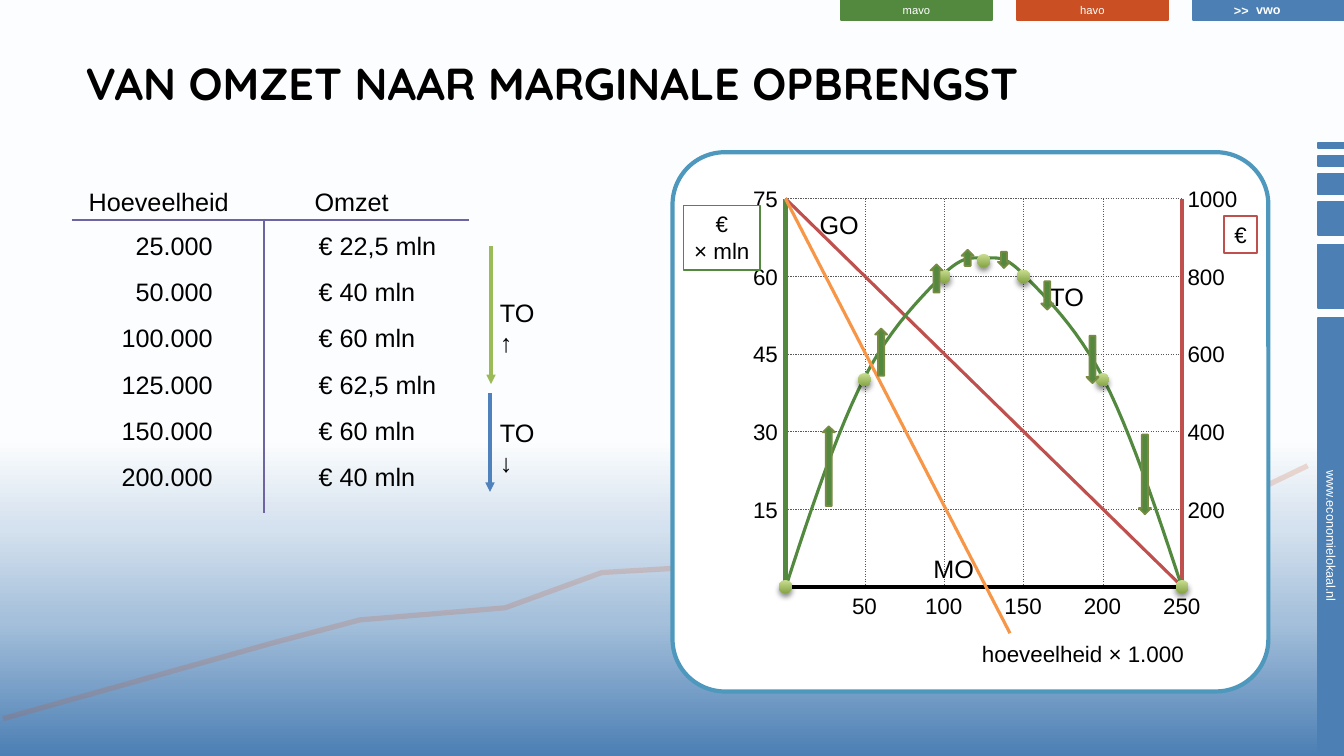
from lxml import etree
from pptx import Presentation
from pptx.dml.color import RGBColor
from pptx.enum.dml import MSO_LINE
from pptx.enum.shapes import MSO_CONNECTOR, MSO_SHAPE
from pptx.enum.text import MSO_ANCHOR, MSO_AUTO_SIZE, PP_ALIGN
from pptx.oxml.ns import qn
from pptx.util import Inches, Pt

WIDTH, HEIGHT = 13.33, 7.5
BLUE, GREEN, RUST = RGBColor(0x4C, 0x7F, 0xB4), RGBColor(0x52, 0x89, 0x3F), RGBColor(0xCA, 0x4F, 0x22)
BLACK, WHITE, GREY = RGBColor(0, 0, 0), RGBColor(255, 255, 255), RGBColor(0x59, 0x59, 0x59)
RED, ORANGE, PURPLE = RGBColor(0xC0, 0x50, 0x4D), RGBColor(0xF7, 0x96, 0x46), RGBColor(0x6F, 0x64, 0xA2)
FRAME, OLIVE = RGBColor(0x4F, 0x98, 0xBD), RGBColor(0x79, 0x8A, 0x42)
LIME, ARROW_BLUE = RGBColor(0x9B, 0xBB, 0x59), RGBColor(0x4F, 0x81, 0xBD)
SKY = [(0, "4C7FB4"), (18, "A5C0DB"), (30, "D4E1EE"), (42, "FCFDFE"), (50, "FFFFFF")]
MARKER = [(0, "C9DD90"), (100, "86A547")]
NO_TABLE_STYLE = "{2D5ABB26-0587-4C30-8999-92F81FD0307C}"

# Plot grid: five columns of 50 and five rows of 15 (left) or 200 (right)
PLOT_LEFT, PLOT_TOP, COLUMN, ROW, STEPS = 7.79, 1.97, 0.787, 0.77, 5
PLOT_RIGHT, PLOT_BOTTOM = PLOT_LEFT + STEPS * COLUMN, PLOT_TOP + STEPS * ROW

TREND = [(0.03, 7.13), (2.7, 6.38), (3.57, 6.15), (5.01, 6.03), (5.97, 5.68), (7.85, 5.57),
         (8.49, 5.66), (9.28, 5.49), (10.71, 5.37), (11.12, 5.51), (12.97, 4.62)]
# Start point, then two control points and an end point per segment
REVENUE_CURVE = [(0.5, 0.2), (16.5, 15.4), (33, 30.4), (50, 40.5), (66.6, 50.4), (87.6, 56.5),
                 (99.6, 60.4), (112.3, 64.1), (117.4, 63.5), (125.6, 63.5), (133.9, 63.5),
                 (138.3, 64.1), (150.4, 60.2), (163, 56.3), (184, 50), (200.5, 40.1),
                 (217, 30.2), (233.5, 15.2), (249.5, 0.2)]
REVENUE_POINTS = [(50, 40), (200, 40), (0, 0), (250, 0), (100, 60), (150, 60), (125, 63)]
# Quantity, top value, length in inches
RISES = [(27.3, 31, 0.79), (60.3, 49.9, 0.47), (95.2, 62.3, 0.28), (114.8, 65.1, 0.16)]
FALLS = [(226.5, 29.4, 0.79), (193.5, 48.5, 0.47), (165, 59, 0.28), (137.7, 64.7, 0.16)]
REVENUE_TABLE = [("Hoeveelheid", "Omzet"), ("25.000", "€ 22,5 mln"), ("50.000", "€ 40 mln"),
                 ("100.000", "€ 60 mln"), ("125.000", "€ 62,5 mln"), ("150.000", "€ 60 mln"),
                 ("200.000", "€ 40 mln")]


def plot_point(quantity, value):
    return PLOT_LEFT + quantity / 50 * COLUMN, PLOT_BOTTOM - value / 15 * ROW


def add_run(paragraph, text, size, color=BLACK, bold=False, name="Arial"):
    run = paragraph.add_run()
    run.text = text
    run.font.size, run.font.name, run.font.bold = Pt(size), name, bold
    run.font.color.rgb = color


def set_gradient(element, stops, angle):
    gradient = element.find(".//" + qn("a:gradFill"))
    stop_list = gradient.find(qn("a:gsLst"))
    for old_stop in list(stop_list):
        stop_list.remove(old_stop)
    for position, color in stops:
        stop = etree.SubElement(stop_list, qn("a:gs"), pos=str(position * 1000))
        etree.SubElement(stop, qn("a:srgbClr"), val=color)
    gradient.find(qn("a:lin")).set("ang", str(angle * 60000))


def add_box(slide, kind, left, top, width, height, fill, line, weight=1.25):
    shape = slide.shapes.add_shape(kind, Inches(left), Inches(top), Inches(width), Inches(height))
    shape.shadow.inherit = False
    shape.fill.solid()
    shape.fill.fore_color.rgb = fill
    shape.line.color.rgb, shape.line.width = line, Pt(weight)
    return shape


def add_banner(slide, left, top, width, height, color, text="", size=9, bold=False):
    shape = add_box(slide, MSO_SHAPE.RECTANGLE, left, top, width, height, color, color)
    frame = shape.text_frame
    frame.margin_top, frame.margin_bottom = 0, Inches(0.01)
    frame.vertical_anchor = MSO_ANCHOR.MIDDLE
    frame.paragraphs[0].alignment = PP_ALIGN.CENTER
    if text:
        add_run(frame.paragraphs[0], text, size, WHITE, bold)
    return shape


def add_label(slide, text, left, top, width, height=0.37, size=16, color=BLACK, bold=False, wrap=False):
    box = slide.shapes.add_textbox(Inches(left), Inches(top), Inches(width), Inches(height))
    box.text_frame.word_wrap = wrap
    add_run(box.text_frame.paragraphs[0], text, size, color, bold)


def add_unit(slide, lines, left, top, width, height, color):
    shape = add_box(slide, MSO_SHAPE.RECTANGLE, left, top, width, height, WHITE, color)
    frame = shape.text_frame
    frame.word_wrap, frame.vertical_anchor = False, MSO_ANCHOR.TOP
    for index, text in enumerate(lines):
        paragraph = frame.add_paragraph() if index else frame.paragraphs[0]
        paragraph.alignment = PP_ALIGN.CENTER
        add_run(paragraph, text, 16)


def add_line(slide, start, end, color, weight, dash=None, arrow=False):
    line = slide.shapes.add_connector(MSO_CONNECTOR.STRAIGHT, *map(Inches, (*start, *end)))
    line.line.color.rgb, line.line.width = color, Pt(weight)
    if dash:
        line.line.dash_style = dash
    properties = line._element.spPr
    if arrow:
        etree.SubElement(properties.find(qn("a:ln")), qn("a:tailEnd"), type="triangle")
    etree.SubElement(properties, qn("a:effectLst"))


def add_path(slide, points, color, weight):
    points = [(Inches(x), Inches(y)) for x, y in points]
    builder = slide.shapes.build_freeform(*points[0])
    builder.add_line_segments(points[1:], close=False)
    shape = builder.convert_to_shape()
    shape.shadow.inherit = False
    shape.fill.background()
    shape.line.color.rgb, shape.line.width = color, Pt(weight)
    return shape


def smooth_points(controls, pieces=12):
    points = [controls[0]]
    for first in range(0, len(controls) - 1, 3):
        segment = controls[first:first + 4]
        for piece in range(1, pieces + 1):
            t = piece / pieces
            weights = ((1 - t) ** 3, 3 * t * (1 - t) ** 2, 3 * t * t * (1 - t), t ** 3)
            points.append(tuple(sum(w * p[axis] for w, p in zip(weights, segment)) for axis in (0, 1)))
    return points


def add_marker(slide, quantity, value, size=0.13):
    x, y = plot_point(quantity, value)
    shape = add_box(slide, MSO_SHAPE.OVAL, x - size / 2, y - size / 2, size, size, LIME, LIME)
    shape.line.fill.background()
    shape.fill.gradient()
    set_gradient(shape._element, MARKER, 90)
    effects = shape._element.spPr.find(qn("a:effectLst"))
    shadow = etree.SubElement(effects, qn("a:outerShdw"), blurRad="50800", dist="38100", dir="5400000")
    color = etree.SubElement(shadow, qn("a:srgbClr"), val="000000")
    etree.SubElement(color, qn("a:alpha"), val="46000")


def add_border(cell, side):
    border = etree.Element(qn("a:" + side), w=str(Pt(1.25)))
    fill = etree.SubElement(border, qn("a:solidFill"))
    etree.SubElement(fill, qn("a:srgbClr"), val=str(PURPLE))
    cell._tc.get_or_add_tcPr().insert(0, border)


def add_template(slide):
    slide.background.fill.gradient()
    set_gradient(slide._element, SKY, 270)
    # Side bars: middle and length
    for middle, length, text in [(5.32, 4.33, "www.economielokaal.nl"), (2.74, 0.63, ""), (2.17, 0.33, ""),
                                 (1.83, 0.2, ""), (1.6, 0.1, ""), (1.44, 0.05, "")]:
        bar = add_banner(slide, 13.2 - length / 2, middle - 0.13, length, 0.26, BLUE, text)
        bar.rotation = 90
    # Level tabs
    for index, (text, color, size) in enumerate([("mavo", GREEN, 8), ("havo", RUST, 8), ("vwo", BLUE, 9)]):
        add_banner(slide, 8.34 + index * 1.745, 0, 1.5, 0.2, color, text, size, text == "vwo")
    trend = add_path(slide, TREND, RUST, 3.75)
    color = trend._element.spPr.find(qn("a:ln")).find(".//" + qn("a:srgbClr"))
    etree.SubElement(color, qn("a:alpha"), val="19000")
    add_label(slide, ">>", 12.14, -0.02, 0.35, 0.25, 9, WHITE, True)


def add_title(slide):
    title = slide.shapes.title
    title.left, title.top, title.width, title.height = map(Inches, (0.75, 0.5, 10.02, 0.89))
    frame = title.text_frame
    frame.auto_size, frame.vertical_anchor = MSO_AUTO_SIZE.NONE, MSO_ANCHOR.TOP
    frame.paragraphs[0].alignment = PP_ALIGN.LEFT
    add_run(frame.paragraphs[0], "VAN OMZET NAAR MARGINALE OPBRENGST", 32, bold=True, name="Quicksand")


def add_revenue_table(slide):
    heights = [0.36] + [0.458] * 5 + [0.62]
    graphic = slide.shapes.add_table(7, 2, Inches(0.71), Inches(1.82), Inches(3.94), Inches(sum(heights)))
    table = graphic.table
    table.first_row = table.horz_banding = False
    table._tbl.tblPr.find(qn("a:tableStyleId")).text = NO_TABLE_STYLE
    table.columns[0].width, table.columns[1].width = Inches(1.91), Inches(2.03)
    for row, texts in enumerate(REVENUE_TABLE):
        table.rows[row].height = Inches(heights[row])
        for column, text in enumerate(texts):
            cell = table.cell(row, column)
            cell.fill.background()
            cell.margin_top, cell.margin_bottom = Inches(0.13 if row else 0.05), 0
            cell.margin_left = Inches((0.54 if row else 0.5) if column else 0.17)
            cell.margin_right = Inches(0 if column or not row else 0.51)
            paragraph = cell.text_frame.paragraphs[0]
            paragraph.alignment = PP_ALIGN.RIGHT if row and not column else PP_ALIGN.LEFT
            add_run(paragraph, text, 18)
            if not row:
                add_border(cell, "lnB")
            elif not column:
                add_border(cell, "lnR")
    # Rise and fall of total revenue
    for text, x, top, bottom, label_top, color in [("TO↑", 4.87, 2.44, 3.81, 2.9, LIME),
                                                   ("TO↓", 4.86, 3.9, 4.88, 4.09, ARROW_BLUE)]:
        add_line(slide, (x, top), (x, bottom), color, 2.25, arrow=True)
        add_label(slide, text, 4.86, label_top, 0.65, 0.4, 18, wrap=True)


def add_plot(slide):
    frame = add_box(slide, MSO_SHAPE.ROUNDED_RECTANGLE, 6.67, 1.51, 5.91, 5.35, WHITE, FRAME, 3)
    frame.adjustments[0] = 0.097
    top_left, top_right = (PLOT_LEFT, PLOT_TOP), (PLOT_RIGHT, PLOT_TOP)
    bottom_left, bottom_right = (PLOT_LEFT, PLOT_BOTTOM), (PLOT_RIGHT, PLOT_BOTTOM)
    # Grid lines and axis numbers
    for step in range(1, STEPS + 1):
        x, y = PLOT_LEFT + step * COLUMN, PLOT_BOTTOM - step * ROW
        add_line(slide, (PLOT_LEFT, y), (PLOT_RIGHT, y), GREY, 0.25, MSO_LINE.DASH)
        add_line(slide, (x, PLOT_TOP), (x, PLOT_BOTTOM), GREY, 0.25, MSO_LINE.DASH)
        quantity, price = str(step * 50), str(step * 200)
        quantity_width, price_width = (0.2 + 0.125 * len(text) for text in (quantity, price))
        add_label(slide, str(step * 15), 7.37, y - 0.18, 0.45)
        add_label(slide, price, 11.68, y - 0.18, price_width)
        add_label(slide, quantity, x - quantity_width / 2, 5.83, quantity_width)
    # Axes and straight curves
    add_line(slide, top_left, bottom_left, GREEN, 3)
    add_line(slide, top_left, bottom_right, RED, 2.25)
    add_line(slide, top_right, bottom_right, RED, 3)
    add_line(slide, bottom_right, bottom_left, BLACK, 3)
    add_unit(slide, ["€"], 12.14, 2.14, 0.33, 0.37, RED)
    add_unit(slide, ["€", "× mln"], 6.78, 2.04, 0.76, 0.64, GREEN)
    # Total revenue
    add_path(slide, [plot_point(*point) for point in smooth_points(REVENUE_CURVE)], GREEN, 2.25)
    for point in REVENUE_POINTS:
        add_marker(slide, *point)
    add_line(slide, top_left, plot_point(141.5, -9), ORANGE, 2.25)
    for text, left, top, width in [("GO", 8.03, 2.03, 0.59), ("TO", 10.31, 2.74, 0.55), ("MO", 9.16, 5.44, 0.61)]:
        add_label(slide, text, left, top, width, 0.4, 18)
    add_label(slide, "hoeveelheid × 1.000", 9.64, 6.3, 2.39)
    for kind, arrows in [(MSO_SHAPE.UP_ARROW, RISES), (MSO_SHAPE.DOWN_ARROW, FALLS)]:
        for quantity, value, length in arrows:
            x, y = plot_point(quantity, value)
            add_box(slide, kind, x - 0.06, y, 0.12, length, GREEN, OLIVE)


def main():
    presentation = Presentation()
    presentation.slide_width, presentation.slide_height = Inches(WIDTH), Inches(HEIGHT)
    slide = presentation.slides.add_slide(presentation.slide_layouts[5])
    add_template(slide)
    add_title(slide)
    add_plot(slide)
    add_revenue_table(slide)
    presentation.save("out.pptx")


if __name__ == "__main__":
    main()
